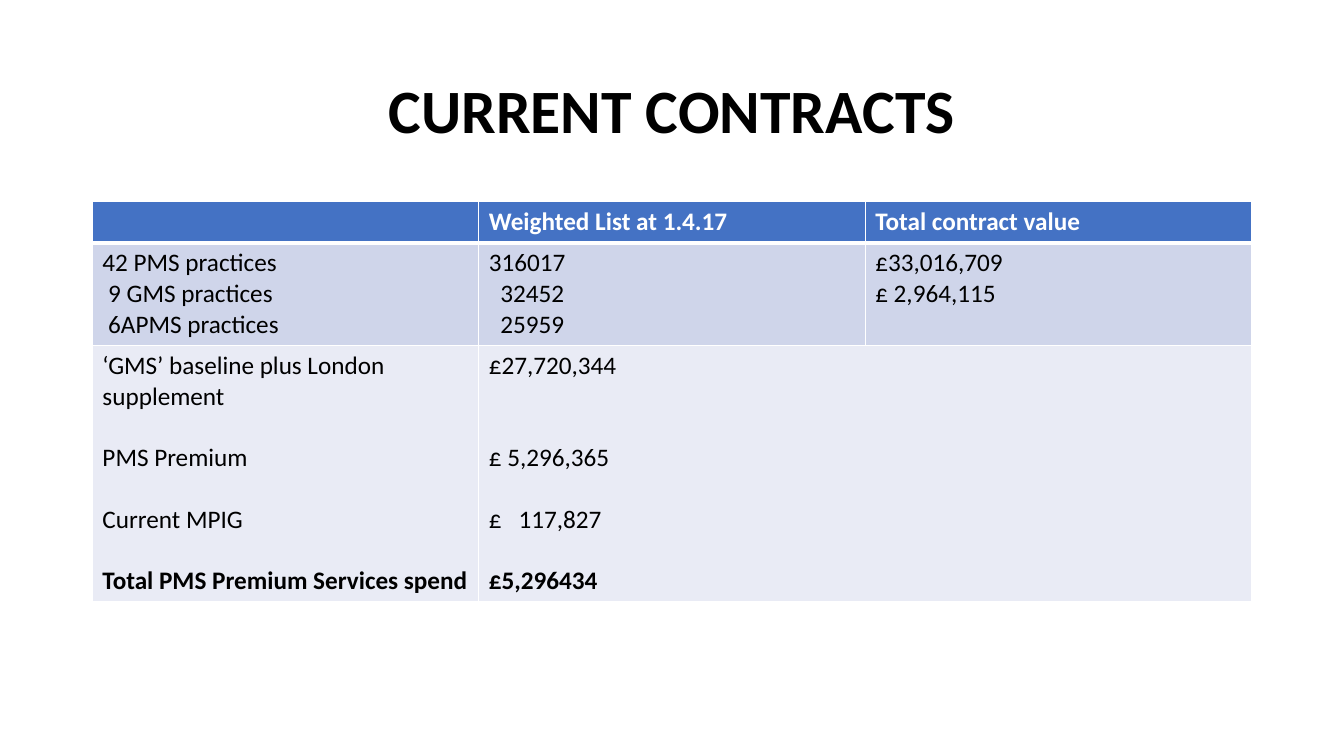
import pptx
import pptx.dml.color
import pptx.enum.text
import pptx.oxml
import pptx.oxml.ns
import pptx.util

FONT = "Calibri"
BODY_SIZE = 18
BLANK_LINE = 22
SPACE = 4.07
COLUMNS, ROWS = 160, 90
WHITE, BLACK = "FFFFFF", "000000"
HEADER, BAND_DARK, BAND_LIGHT = "4472C4", "CFD5EA", "E9EBF5"


def rgb(value):
    return pptx.dml.color.RGBColor.from_string(value)


def line(text, **style):
    """Pair one paragraph's text with its format."""
    return text, style


def write(p, text, size=BODY_SIZE, color=BLACK, bold=False, align=None,
          spacing=None, before=0, indent=0, tab=None):
    """Fill a paragraph; before, indent and tab are in points."""
    p.alignment = align
    p.line_spacing = spacing
    p.space_before = pptx.util.Pt(before)
    pPr = p._p.get_or_add_pPr()
    if indent:
        pPr.set("marL", str(pptx.util.Pt(indent)))
    if tab:
        pPr.append(pptx.oxml.parse_xml(
            f'<a:tabLst {pptx.oxml.ns.nsdecls("a")}>'
            f'<a:tab pos="{pptx.util.Pt(tab)}" algn="l"/></a:tabLst>'))
    r = p.add_run()
    r.text = text
    r.font.name = FONT
    r.font.size = pptx.util.Pt(size)
    r.font.bold = bold
    r.font.color.rgb = rgb(color)


def write_lines(tf, lines):
    for i, (text, style) in enumerate(lines):
        write(tf.add_paragraph() if i else tf.paragraphs[0], text, **style)


def set_borders(cell, bottom):
    tcPr = cell._tc.get_or_add_tcPr()
    for side, width in (("L", 1), ("R", 1), ("T", 1), ("B", bottom)):
        tcPr.append(pptx.oxml.parse_xml(
            f'<a:ln{side} {pptx.oxml.ns.nsdecls("a")} w="{pptx.util.Pt(width)}">'
            f'<a:solidFill><a:srgbClr val="{WHITE}"/></a:solidFill></a:ln{side}>'))


class SlideBuilder:
    """Places elements on a grid of COLUMNS by ROWS."""

    def __init__(self, prs):
        self.cell_width = prs.slide_width / COLUMNS
        self.cell_height = prs.slide_height / ROWS
        self.s = prs.slides.add_slide(prs.slide_layouts[6])

    def x(self, columns):
        return round(columns * self.cell_width)

    def y(self, rows):
        return round(rows * self.cell_height)

    def box(self, left, top, width, height):
        return self.x(left), self.y(top), self.x(width), self.y(height)

    def title(self, text, *area):
        tf = self.s.shapes.add_textbox(*self.box(*area)).text_frame
        tf.word_wrap = True
        tf.vertical_anchor = pptx.enum.text.MSO_ANCHOR.MIDDLE
        write(tf.paragraphs[0], text, size=44, bold=True, spacing=0.9,
              align=pptx.enum.text.PP_ALIGN.CENTER)

    def table(self, left, top, width, heights, fills, contents):
        area = self.box(left, top, width, sum(heights))
        table = self.s.shapes.add_table(
            len(contents), len(contents[0]), *area).table
        table.horz_banding = False
        for column in table.columns:
            column.width = self.x(width / len(contents[0]))
        for i, (height, fill, row) in enumerate(zip(heights, fills, contents)):
            table.rows[i].height = self.y(height)
            for j, lines in enumerate(row):
                cell = table.cell(i, j)
                set_borders(cell, bottom=1 if i else 3)
                cell.fill.solid()
                cell.fill.fore_color.rgb = rgb(fill)
                write_lines(cell.text_frame, lines)
        return table


def main():
    prs = pptx.Presentation()
    prs.slide_width = pptx.util.Inches(13.33)
    prs.slide_height = pptx.util.Inches(7.5)
    slide = SlideBuilder(prs)
    slide.title("CURRENT CONTRACTS", 11, 4.8, 138, 17.4)

    heading = {"color": WHITE, "bold": True}
    spaced = {"before": BLANK_LINE}
    contents = [
        [[],
         [line("Weighted List at 1.4.17", **heading)],
         [line("Total contract value", **heading)]],
        [[line("42 PMS practices"),
          line("9 GMS practices", indent=SPACE),
          line("6APMS practices", indent=SPACE)],
         [line("316017"),
          line("32452", indent=2 * SPACE),
          line("25959", indent=2 * SPACE)],
         [line("£33,016,709"), line("£ 2,964,115")]],
        [[line("‘GMS’ baseline plus London supplement"),
          line("PMS Premium", **spaced),
          line("Current MPIG", **spaced),
          line("Total PMS Premium Services spend", bold=True, **spaced)],
         [line("£27,720,344"),
          line("£ 5,296,365", before=2 * BLANK_LINE),
          line("£\t117,827", tab=21.3, **spaced),
          line("£5,296434", bold=True, **spaced)],
         []],
    ]
    table = slide.table(11, 24, 138, [4.9, 12.2, 30.5],
                        [HEADER, BAND_DARK, BAND_LIGHT], contents)
    table.cell(2, 1).merge(table.cell(2, 2))
    prs.save("out.pptx")


if __name__ == "__main__":
    main()
